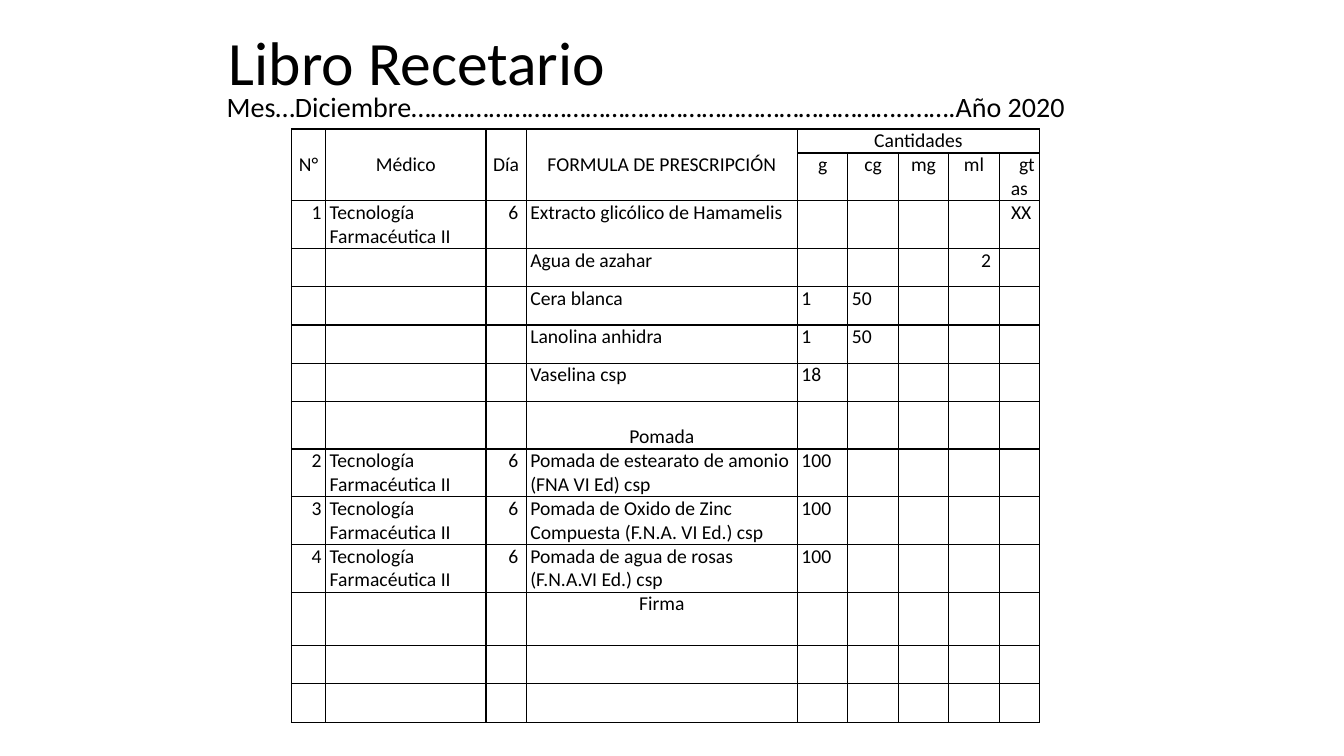
from dataclasses import dataclass

from lxml import etree
from pptx import Presentation
from pptx.dml.color import RGBColor
from pptx.enum import text
from pptx.oxml import ns
from pptx.util import Emu, Pt

PX = 9144  # 100 px to the inch
FONT = "Calibri"
BLACK = "000000"
CELL_SIZE = 14
LEFT, CENTER, RIGHT = text.PP_ALIGN.LEFT, text.PP_ALIGN.CENTER, text.PP_ALIGN.RIGHT
TOP, MIDDLE, BOTTOM = text.MSO_ANCHOR.TOP, text.MSO_ANCHOR.MIDDLE, text.MSO_ANCHOR.BOTTOM


@dataclass
class Column:
    width: int
    heading: str
    align: text.PP_ALIGN = LEFT
    right_inset: int = 4


@dataclass
class Entry:
    height: int
    number: str = ""
    doctor: str = ""
    day: str = ""
    formula: str = ""
    g: str = ""
    cg: str = ""
    mg: str = ""
    ml: str = ""
    drops: str = ""
    formula_align: text.PP_ALIGN = LEFT
    formula_anchor: text.MSO_ANCHOR = TOP

    def values(self) -> list[str]:
        return [self.number, self.doctor, self.day, self.formula,
                self.g, self.cg, self.mg, self.ml, self.drops]


COLUMNS = [
    Column(34, "N°", RIGHT),
    Column(159, "Médico"),
    Column(40, "Día", RIGHT, 8),
    Column(269, "FORMULA DE PRESCRIPCIÓN"),
    Column(50, "g"),
    Column(50, "cg"),
    Column(50, "mg"),
    Column(50, "ml", RIGHT, 8),
    Column(40, "gtas", RIGHT, 8),
]
FORMULA = 3
FIRST_UNIT = 4
HEADER_HEIGHTS = [23, 47]
DOCTOR = "Tecnología Farmacéutica II"
ENTRIES = [
    Entry(47, "1", DOCTOR, "6", "Extracto glicólico de Hamamelis", drops="XX"),
    Entry(38, formula="Agua de azahar", ml="2"),
    Entry(38, formula="Cera blanca", g="1", cg="50"),
    Entry(38, formula="Lanolina anhidra", g="1", cg="50"),
    Entry(38, formula="Vaselina csp", g="18"),
    Entry(47, formula="Pomada", formula_align=CENTER, formula_anchor=BOTTOM),
    Entry(47, "2", DOCTOR, "6", "Pomada de estearato de amonio (FNA VI Ed) csp", "100"),
    Entry(47, "3", DOCTOR, "6", "Pomada de Oxido de Zinc Compuesta (F.N.A. VI Ed.) csp", "100"),
    Entry(47, "4", DOCTOR, "6", "Pomada de agua de rosas (F.N.A.VI Ed.) csp", "100"),
    Entry(53, formula="Firma", formula_align=CENTER),
    Entry(38),
    Entry(38),
]


def px(length: int) -> Emu:
    return Emu(length * PX)


def color(value: str) -> RGBColor:
    return RGBColor.from_string(value)


def add_span(para, words: str, size: int) -> None:
    span = para.add_run()
    span.text = words
    span.font.name = FONT
    span.font.size = Pt(size)
    span.font.color.rgb = color(BLACK)


def style_cell(cell) -> None:
    """Give a cell its insets, thin borders, no fill and a small empty line."""
    cell.margin_left = cell.margin_right = px(4)
    cell.margin_top = cell.margin_bottom = 0
    properties = cell._tc.get_or_add_tcPr()
    for side in ("lnL", "lnR", "lnT", "lnB"):
        line = etree.SubElement(properties, ns.qn(f"a:{side}"), w=str(Pt(1)))
        fill = etree.SubElement(line, ns.qn("a:solidFill"))
        etree.SubElement(fill, ns.qn("a:srgbClr"), val=BLACK)
    cell.fill.background()
    para = cell.text_frame.paragraphs[0]
    etree.SubElement(para._p, ns.qn("a:endParaRPr"), sz=str(CELL_SIZE * 100))


def write_cell(cell, words: str, align: text.PP_ALIGN,
               anchor: text.MSO_ANCHOR = TOP, right_inset: int = 4) -> None:
    cell.vertical_anchor = anchor
    cell.margin_right = px(right_inset)
    para = cell.text_frame.paragraphs[0]
    para.alignment = align
    if words:
        add_span(para, words, CELL_SIZE)


def add_title(page) -> None:
    title = page.shapes.title
    title.left, title.top, title.width, title.height = px(217), px(3), px(900), px(125)
    title.text_frame.auto_size = text.MSO_AUTO_SIZE.NONE
    title.text_frame.vertical_anchor = MIDDLE
    para = title.text_frame.paragraphs[0]
    para.alignment = LEFT
    para.line_spacing = 0.9
    add_span(para, "Libro Recetario", 44)


def add_month_line(page) -> None:
    box = page.shapes.add_textbox(px(215), px(84), px(890), px(44))
    box.text_frame.word_wrap = True
    box.text_frame.auto_size = text.MSO_AUTO_SIZE.SHAPE_TO_FIT_TEXT
    add_span(box.text_frame.paragraphs[0],
             "Mes…Diciembre…………………………………………………………………..…….Año 2020", 20)


def add_register(page) -> None:
    heights = HEADER_HEIGHTS + [entry.height for entry in ENTRIES]
    width = sum(column.width for column in COLUMNS)
    table = page.shapes.add_table(len(heights), len(COLUMNS), px(289), px(128),
                                  px(width), px(sum(heights))).table
    table.first_row = table.horz_banding = False
    for row, height in zip(table.rows, heights):
        row.height = px(height)
    for table_column, column in zip(table.columns, COLUMNS):
        table_column.width = px(column.width)
    for cell in table.iter_cells():
        style_cell(cell)

    # Headings: the first four span both rows, the units sit under one heading
    for index, column in enumerate(COLUMNS):
        if index < FIRST_UNIT:
            table.cell(0, index).merge(table.cell(1, index))
            write_cell(table.cell(0, index), column.heading, CENTER, MIDDLE)
        else:
            write_cell(table.cell(1, index), column.heading, CENTER)
    table.cell(0, FIRST_UNIT).merge(table.cell(0, len(COLUMNS) - 1))
    write_cell(table.cell(0, FIRST_UNIT), "Cantidades", CENTER)
    drops = table.cell(1, len(COLUMNS) - 1).text_frame.paragraphs[0]
    drops._p.get_or_add_pPr().set("indent", str(px(15)))

    # Prescriptions
    for row, entry in enumerate(ENTRIES, start=len(HEADER_HEIGHTS)):
        for index, (column, words) in enumerate(zip(COLUMNS, entry.values())):
            align, anchor = column.align, TOP
            if index == FORMULA:
                align, anchor = entry.formula_align, entry.formula_anchor
            write_cell(table.cell(row, index), words, align, anchor, column.right_inset)


def main() -> None:
    deck = Presentation()
    deck.slide_width, deck.slide_height = px(1333), px(750)
    page = deck.slides.add_slide(deck.slide_layouts[5])
    add_title(page)
    add_register(page)
    add_month_line(page)
    deck.save("out.pptx")


if __name__ == "__main__":
    main()
